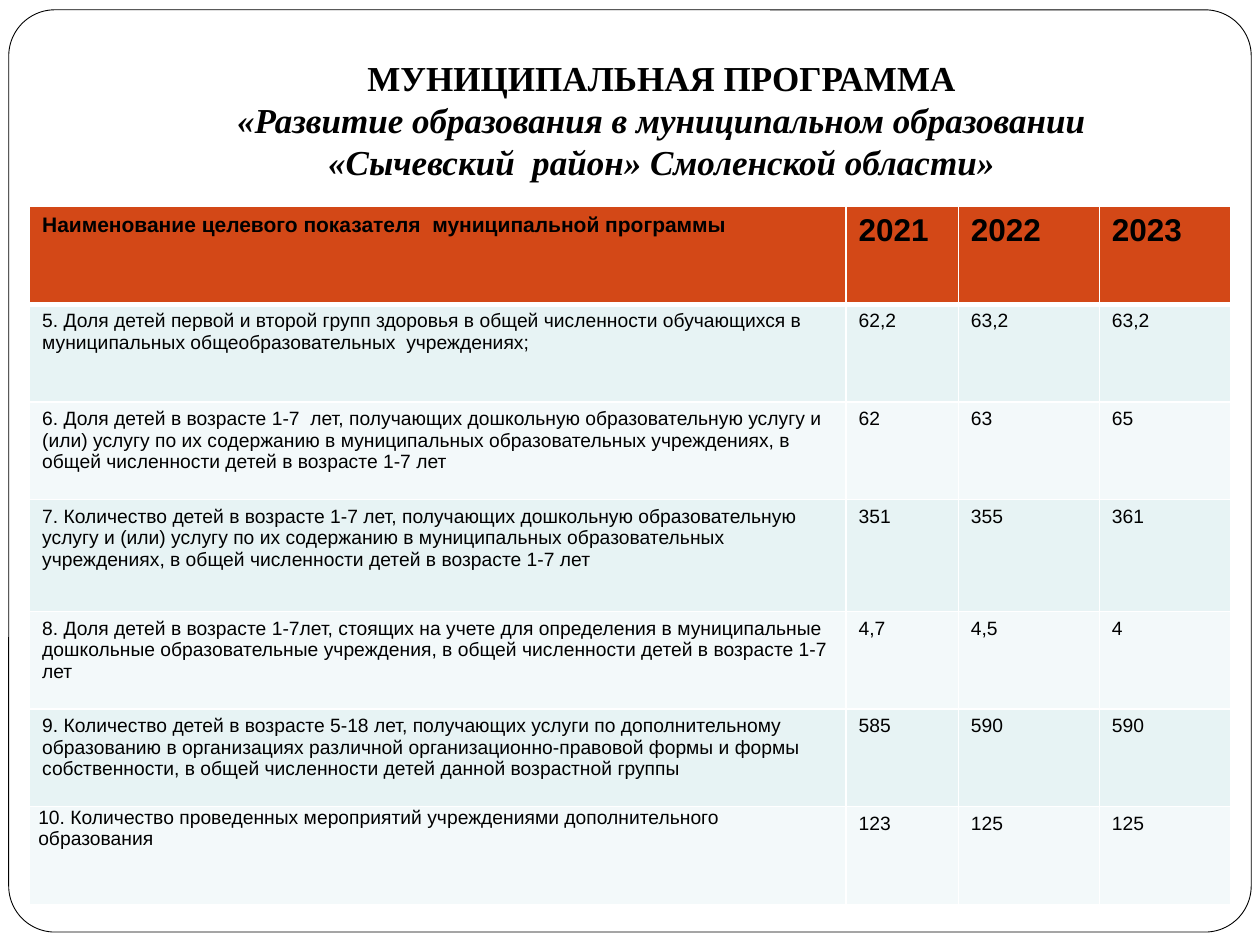
import pptx
import pptx.dml.color
import pptx.enum.shapes
import pptx.enum.text
import pptx.util
from lxml import etree
from pptx.oxml.ns import qn

Pt = pptx.util.Pt

COLORS = {
    "black": "000000",
    "white": "FFFFFF",
    "header": "D34817",
    "odd": "E7F3F4",
    "even": "F3F9FA",
}
TITLE_FONT = {"name": "Times New Roman", "size": Pt(20), "bold": True}
HEADER_FONT = {"name": "Arial", "size": Pt(12), "bold": True}
YEAR_FONT = {**HEADER_FONT, "size": Pt(18)}
BODY_FONT = {"name": "Arial", "size": Pt(11), "bold": False}

TITLE_LINES = [
    ("МУНИЦИПАЛЬНАЯ ПРОГРАММА", False),
    ("«Развитие образования в муниципальном образовании", True),
    ("«Сычевский  район» Смоленской области»", True),
]
COLUMN_WIDTHS = [466.6, 64.1, 80.6, 74.9]
ROW_HEIGHTS = [55.8, 55.8, 55.8, 64, 55.8, 55.8, 55.8]
INDICATORS = [
    ("Наименование целевого показателя  муниципальной программы",
     "2021", "2022", "2023"),
    ("5. Доля детей первой и второй групп здоровья в общей численности "
     "обучающихся в муниципальных общеобразовательных  учреждениях;",
     "62,2", "63,2", "63,2"),
    ("6. Доля детей в возрасте 1-7  лет, получающих дошкольную образовательную "
     "услугу и (или) услугу по их содержанию в муниципальных образовательных "
     "учреждениях, в общей численности детей в возрасте 1-7 лет",
     "62", "63", "65"),
    ("7. Количество детей в возрасте 1-7 лет, получающих дошкольную "
     "образовательную услугу и (или) услугу по их содержанию в муниципальных "
     "образовательных учреждениях, в общей численности детей в возрасте 1-7 лет",
     "351", "355", "361"),
    ("8. Доля детей в возрасте 1-7лет, стоящих на учете для определения в "
     "муниципальные дошкольные образовательные учреждения, в общей численности "
     "детей в возрасте 1-7 лет",
     "4,7", "4,5", "4"),
    ("9. Количество детей в возрасте 5-18 лет, получающих услуги по "
     "дополнительному образованию в организациях различной "
     "организационно-правовой формы и формы собственности, в общей численности "
     "детей данной возрастной группы",
     "585", "590", "590"),
    ("10. Количество проведенных мероприятий учреждениями дополнительного "
     "образования",
     "123", "125", "125"),
]


def set_attributes(target, values):
    for name, value in values.items():
        setattr(target, name, value)


class SlideBuilder:
    def __init__(self, slide, colors):
        self.slide = slide
        self.colors = colors

    def color(self, name):
        return pptx.dml.color.RGBColor.from_string(self.colors[name])

    def format_font(self, font, values):
        set_attributes(font, values)
        font.color.rgb = self.color("black")

    def frame(self, left, top, width, height, radius):
        shape = self.slide.shapes.add_shape(
            pptx.enum.shapes.MSO_SHAPE.ROUNDED_RECTANGLE,
            Pt(left), Pt(top), Pt(width), Pt(height))
        shape.adjustments[0] = radius
        shape.shadow.inherit = False
        shape.fill.solid()
        shape.fill.fore_color.rgb = self.color("white")
        shape.line.color.rgb = self.color("black")
        shape.line.width = Pt(0.5)
        # Behind the title placeholder
        self.slide.shapes._spTree.insert(2, shape._element)

    def title(self, left, top, width, height, lines):
        shape = self.slide.shapes.title
        set_attributes(shape, {"left": Pt(left), "top": Pt(top),
                               "width": Pt(width), "height": Pt(height)})
        set_attributes(shape.text_frame, {
            "word_wrap": True,
            "auto_size": pptx.enum.text.MSO_AUTO_SIZE.NONE,
            "vertical_anchor": pptx.enum.text.MSO_ANCHOR.BOTTOM,
            "margin_left": Pt(7.2), "margin_right": Pt(7.2),
            "margin_top": Pt(3.6), "margin_bottom": Pt(7.2)})
        paragraph = shape.text_frame.paragraphs[0]
        paragraph.alignment = pptx.enum.text.PP_ALIGN.CENTER
        for index, (text, italic) in enumerate(lines):
            if index:
                paragraph.add_line_break()
            run = paragraph.add_run()
            run.text = text
            self.format_font(run.font, {**TITLE_FONT, "italic": italic})

    def borders(self, cell, widths):
        properties = cell._tc.get_or_add_tcPr()
        for side, width in widths.items():
            line = etree.SubElement(properties, qn(f"a:ln{side}"), w=str(Pt(width)))
            fill = etree.SubElement(line, qn("a:solidFill"))
            etree.SubElement(fill, qn("a:srgbClr"), val=self.colors["white"])

    def cell(self, cell, text, font, fill, widths):
        self.borders(cell, widths)
        cell.fill.solid()
        cell.fill.fore_color.rgb = self.color(fill)
        run = cell.text_frame.paragraphs[0].add_run()
        run.text = text
        self.format_font(run.font, font)

    def table(self, left, top, column_widths, row_heights, rows):
        table = self.slide.shapes.add_table(
            len(rows), len(column_widths), Pt(left), Pt(top),
            Pt(sum(column_widths)), Pt(sum(row_heights))).table
        for column, width in zip(table.columns, column_widths):
            column.width = Pt(width)
        for row, height in zip(table.rows, row_heights):
            row.height = Pt(height)
        for row_index, values in enumerate(rows):
            # A thick rule separates the header from the body
            widths = {"L": 1, "R": 1, "T": 3 if row_index == 1 else 1,
                      "B": 3 if row_index == 0 else 1}
            fill = "odd" if row_index % 2 else "even"
            for column_index, text in enumerate(values):
                font = BODY_FONT
                if row_index == 0:
                    fill = "header"
                    font = YEAR_FONT if column_index else HEADER_FONT
                self.cell(table.cell(row_index, column_index),
                          text, font, fill, widths)
        return table


def main():
    presentation = pptx.Presentation()
    presentation.slide_width, presentation.slide_height = Pt(720), Pt(540)
    slide = presentation.slides.add_slide(presentation.slide_layouts[5])
    builder = SlideBuilder(slide, COLORS)

    # Frame and title
    builder.frame(5, 5.6, 710, 527, 0.05)
    builder.title(72, 21.6, 612, 90, TITLE_LINES)

    # Target indicators by year
    table = builder.table(16.9, 118.1, COLUMN_WIDTHS, ROW_HEIGHTS, INDICATORS)
    set_attributes(table.cell(len(INDICATORS) - 1, 0), {
        "margin_left": Pt(5), "margin_right": Pt(5),
        "margin_top": 0, "margin_bottom": 0})

    presentation.save("out.pptx")


if __name__ == "__main__":
    main()
